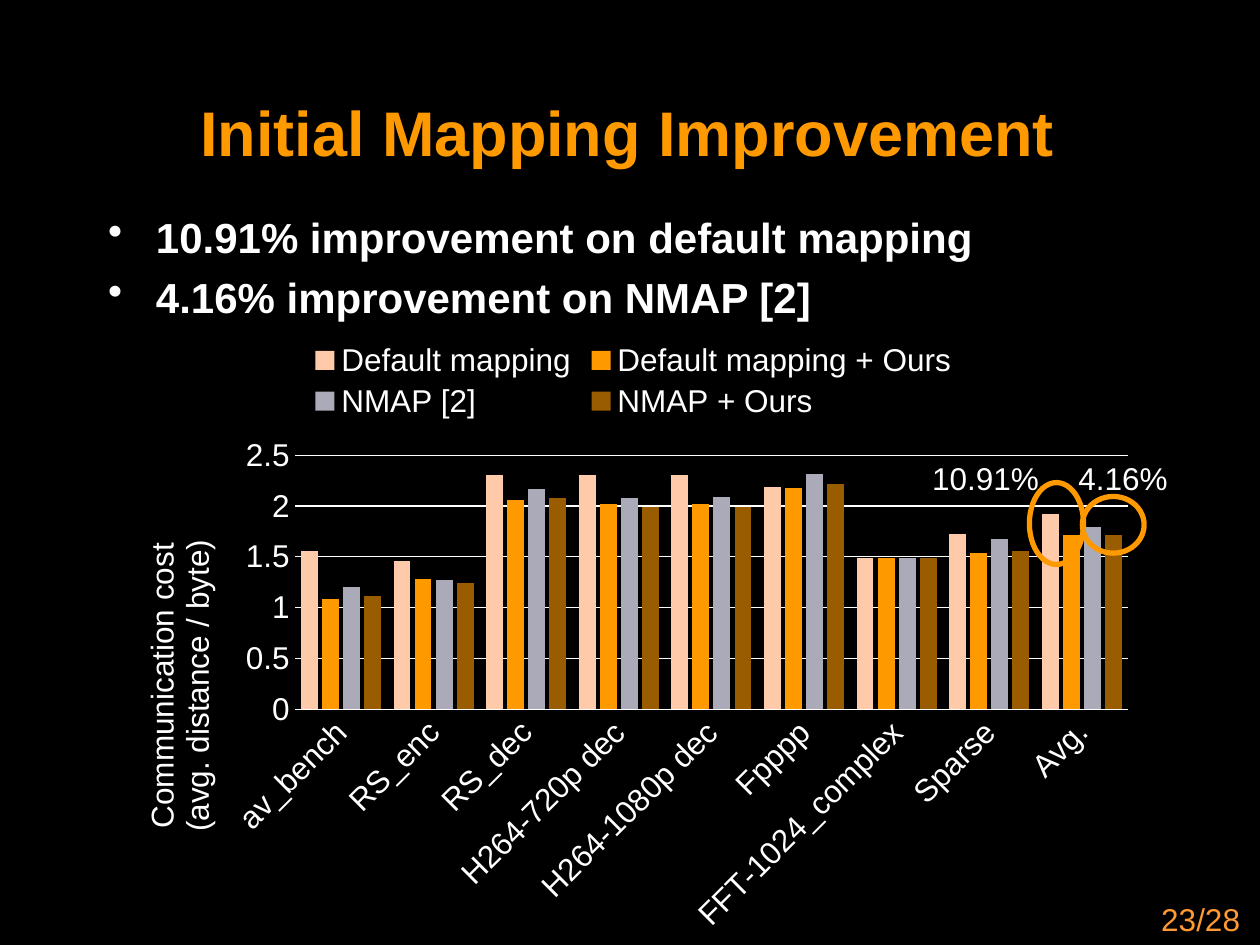
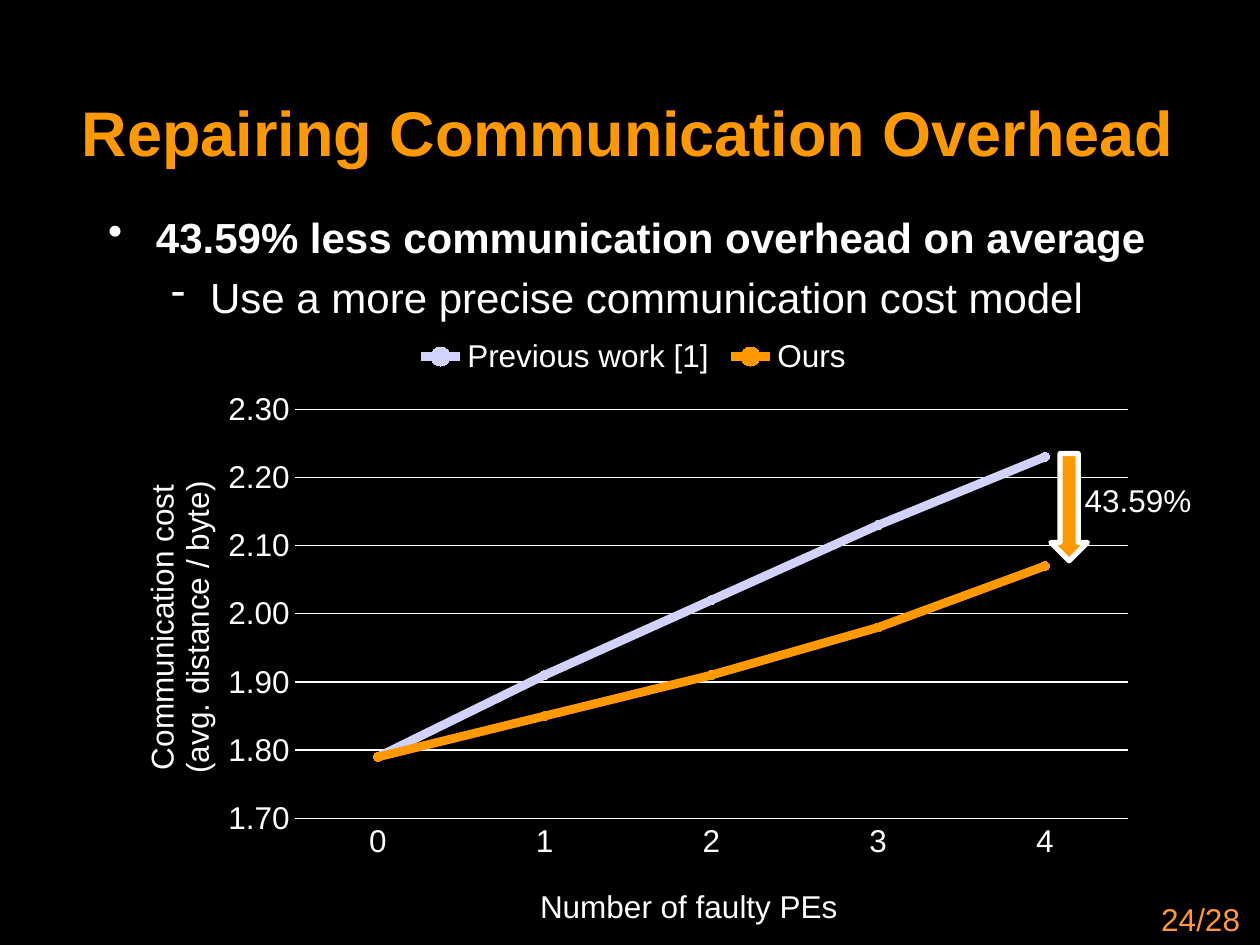
from lxml import etree
from pptx import Presentation
from pptx.chart.data import CategoryChartData
from pptx.dml.color import RGBColor
from pptx.enum.chart import XL_CHART_TYPE, XL_LEGEND_POSITION, XL_MARKER_STYLE, XL_TICK_MARK
from pptx.enum.shapes import MSO_SHAPE
from pptx.enum.text import MSO_ANCHOR, PP_ALIGN
from pptx.oxml.ns import qn
from pptx.util import Inches, Pt

COLUMNS, LINES = XL_CHART_TYPE.COLUMN_CLUSTERED, XL_CHART_TYPE.LINE_MARKERS
ELLIPSE, DOWN_ARROW = MSO_SHAPE.OVAL, MSO_SHAPE.DOWN_ARROW
NO_TICKS = XL_TICK_MARK.NONE
LEFT, CENTER, RIGHT = PP_ALIGN.LEFT, PP_ALIGN.CENTER, PP_ALIGN.RIGHT

FONT = "Arial"
COLORS = {
    "background": "000000", "text": "FFFFFF", "accent": "FF9900", "page": "FF9933",
    "peach": "FFCAAA", "gray": "AAAAB8", "brown": "995C00", "lavender": "D2D2FF",
}
# bullet, left margin, hanging indent, bold
BULLET_LEVELS = [("•", 0.38, 0.38, True), ("-", 0.81, 0.31, False)]
LAST_PAGE = 28
COST_TITLE = ["Communication cost", "(avg. distance / byte)"]

# Chart layouts are fractions of the chart frame: x, y and, where needed, width, height
SLIDES = [
    {
        "title": "Initial Mapping Improvement",
        "title_box": (0.73, 0.58, 8.5, 0.93),
        "bullets": [(0, "10.91% improvement on default mapping"),
                    (0, "4.16% improvement on NMAP [2]")],
        "page": 23,
        "chart": {
            "type": COLUMNS, "box": (0.85, 2.58, 8.27, 4.92),
            "categories": ["av_bench", "RS_enc", "RS_dec", "H264-720p dec", "H264-1080p dec",
                           "Fpppp", "FFT-1024_complex", "Sparse", "Avg."],
            "series": [
                ("Default mapping", "peach", [1.56, 1.46, 2.3, 2.3, 2.3, 2.19, 1.49, 1.72, 1.92]),
                ("Default mapping + Ours", "accent",
                 [1.08, 1.28, 2.06, 2.02, 2.02, 2.18, 1.49, 1.54, 1.71]),
                ("NMAP [2]", "gray", [1.2, 1.27, 2.17, 2.08, 2.09, 2.31, 1.49, 1.68, 1.79]),
                ("NMAP + Ours", "brown", [1.11, 1.24, 2.08, 1.99, 1.99, 2.22, 1.49, 1.56, 1.71]),
            ],
            "scale": (0, 2.5, 0.5), "format": "General", "label_angle": -45,
            "plot_at": (0.18, 0.21, 0.8, 0.41), "legend_at": (0.19, 0.02, 0.63, 0.14),
            "cost_title_at": (0.03, 0.34),
        },
        "marks": [(ELLIPSE, (8.17, 3.83, 0.43, 0.65), None, "accent"),
                  (ELLIPSE, (8.59, 3.94, 0.49, 0.45), None, "accent")],
        "callouts": [("10.91%", (7.3, 3.59, 1.06, 0.4)), ("4.16%", (8.46, 3.59, 0.92, 0.4))],
    },
    {
        "title": "Repairing Communication Overhead",
        "title_box": (-0.03, 0.58, 10.03, 0.93),
        "bullets": [(0, "43.59% less communication overhead on average"),
                    (1, "Use a more precise communication cost model")],
        "page": 24,
        "chart": {
            "type": LINES, "box": (0.85, 2.56, 8.27, 4.92),
            "categories": ["0", "1", "2", "3", "4"],
            "series": [("Previous work [1]", "lavender", [1.79, 1.91, 2.02, 2.13, 2.23]),
                       ("Ours", "accent", [1.79, 1.85, 1.91, 1.98, 2.07])],
            "scale": (1.7, 2.3, 0.1), "format": "0.00", "label_angle": 0,
            "plot_at": (0.18, 0.14, 0.8, 0.66), "legend_at": (0.29, 0.02, 0.43, 0.07),
            "cost_title_at": (0.03, 0.25),
            "category_title": ["Number of faulty PEs"], "category_title_at": (0.41, 0.9),
        },
        "marks": [(DOWN_ARROW, (8.34, 3.6, 0.29, 0.85), "accent", "text")],
        "callouts": [("43.59%", (8.51, 3.77, 1.06, 0.4))],
    },
]


def color(name):
    return RGBColor.from_string(COLORS[name])


def inches(box):
    return [Inches(length) for length in box]


def style_font(font, size, name="text", bold=False):
    font.name, font.size, font.bold = FONT, Pt(size), bold
    font.color.rgb = color(name)


def set_line(line, name, width):
    line.color.rgb = color(name)
    line.width = Pt(width)


def add_run(paragraph, text, size, name="text", bold=False):
    run = paragraph.add_run()
    run.text = text
    style_font(run.font, size, name, bold)


def add_text(slide, box, text, size, name="text", bold=False, align=LEFT,
             anchor=MSO_ANCHOR.TOP, wrap=True):
    frame = slide.shapes.add_textbox(*inches(box)).text_frame
    frame.word_wrap, frame.vertical_anchor = wrap, anchor
    frame.paragraphs[0].alignment = align
    add_run(frame.paragraphs[0], text, size, name, bold)


def add_bullets(slide, bullets):
    frame = slide.shapes.add_textbox(*inches((0.76, 1.63, 8.5, 5.39))).text_frame
    frame.word_wrap = True
    for index, (level, text) in enumerate(bullets):
        paragraph = frame.add_paragraph() if index else frame.paragraphs[0]
        bullet, margin, hanging, bold = BULLET_LEVELS[level]
        paragraph.level = level
        paragraph.space_before = Pt(5.5)
        properties = paragraph._p.get_or_add_pPr()
        properties.set("marL", str(Inches(margin)))
        properties.set("indent", str(-Inches(hanging)))
        etree.SubElement(properties, qn("a:buChar")).set("char", bullet)
        add_run(paragraph, text, 24, bold=bold)


def place(element, index, position, inner=False):
    """Give a chart part a manual layout, as child number index."""
    for old in element.findall(qn("c:layout")):
        element.remove(old)
    layout = etree.Element(qn("c:layout"))
    manual = etree.SubElement(layout, qn("c:manualLayout"))
    settings = [("layoutTarget", "inner")] if inner else []
    settings += [("xMode", "edge"), ("yMode", "edge"), *zip("xywh", position)]
    for tag, value in settings:
        etree.SubElement(manual, qn(f"c:{tag}")).set("val", str(value))
    element.insert(index, layout)


def add_axis_title(axis, lines, position):
    frame = axis.axis_title.text_frame
    for index, text in enumerate(lines):
        paragraph = frame.add_paragraph() if index else frame.paragraphs[0]
        add_run(paragraph, text, 18)
    place(axis.axis_title._element, 1, position)


def style_axes(chart, content):
    costs, categories = chart.value_axis, chart.category_axis
    for axis in (costs, categories):
        axis.major_tick_mark = axis.minor_tick_mark = NO_TICKS
        style_font(axis.tick_labels.font, 18)
    costs.minimum_scale, costs.maximum_scale, costs.major_unit = content["scale"]
    costs.tick_labels.number_format = content["format"]
    costs.tick_labels.number_format_is_linked = False
    costs.format.line.fill.background()
    set_line(costs.major_gridlines.format.line, "text", 0.75)
    set_line(categories.format.line, "text", 0.75)
    label_body = categories._element.find(qn("c:txPr")).find(qn("a:bodyPr"))
    label_body.set("rot", str(content["label_angle"] * 60000))
    add_axis_title(costs, COST_TITLE, content["cost_title_at"])
    title_body = costs.axis_title.text_frame._txBody.find(qn("a:bodyPr"))
    title_body.set("rot", str(-90 * 60000))
    title_body.set("vert", "horz")
    if "category_title" in content:
        add_axis_title(categories, content["category_title"], content["category_title_at"])


def style_series(series, name, kind):
    if kind == COLUMNS:
        series.format.fill.solid()
        series.format.fill.fore_color.rgb = color(name)
        return
    series.smooth = False
    set_line(series.format.line, name, 5)
    series.marker.style, series.marker.size = XL_MARKER_STYLE.CIRCLE, 5
    series.marker.format.fill.solid()
    series.marker.format.fill.fore_color.rgb = color(name)
    set_line(series.marker.format.line, name, 0.75)


def add_cost_chart(slide, content):
    data = CategoryChartData()
    data.categories = content["categories"]
    for label, _, values in content["series"]:
        data.add_series(label, values)
    chart = slide.shapes.add_chart(content["type"], *inches(content["box"]), data).chart
    chart.has_title = False
    style_font(chart.font, 18)
    chart.has_legend = True
    chart.legend.position = XL_LEGEND_POSITION.TOP
    chart.legend.include_in_layout = False
    style_font(chart.legend.font, 18)
    place(chart.legend._element, 1, content["legend_at"])
    plot = chart.plots[0]
    plot.vary_by_categories = False
    if content["type"] == COLUMNS:
        plot.gap_width, plot.overlap = 75, -25
    for series, (_, name, _) in zip(plot.series, content["series"]):
        style_series(series, name, content["type"])
    style_axes(chart, content)
    place(chart._chartSpace.chart.plotArea, 0, content["plot_at"], inner=True)


def add_mark(slide, kind, box, fill, outline):
    mark = slide.shapes.add_shape(kind, *inches(box))
    mark.shadow.inherit = False
    if fill:
        mark.fill.solid()
        mark.fill.fore_color.rgb = color(fill)
    else:
        mark.fill.background()
    set_line(mark.line, outline, 3)


def add_slide(deck, content):
    slide = deck.slides.add_slide(deck.slide_layouts[6])
    slide.background.fill.solid()
    slide.background.fill.fore_color.rgb = color("background")
    add_text(slide, content["title_box"], content["title"], 36, "accent", True, CENTER,
             MSO_ANCHOR.MIDDLE)
    add_bullets(slide, content["bullets"])
    add_cost_chart(slide, content["chart"])
    for mark in content["marks"]:
        add_mark(slide, *mark)
    for text, box in content["callouts"]:
        add_text(slide, box, text, 18, wrap=False)
    add_text(slide, (7.86, 7.09, 2.08, 0.5), f"{content['page']}/{LAST_PAGE}", 18, "page",
             align=RIGHT)


def main():
    deck = Presentation()
    deck.slide_width, deck.slide_height = Inches(10), Inches(7.5)
    for content in SLIDES:
        add_slide(deck, content)
    deck.save("out.pptx")


if __name__ == "__main__":
    main()
